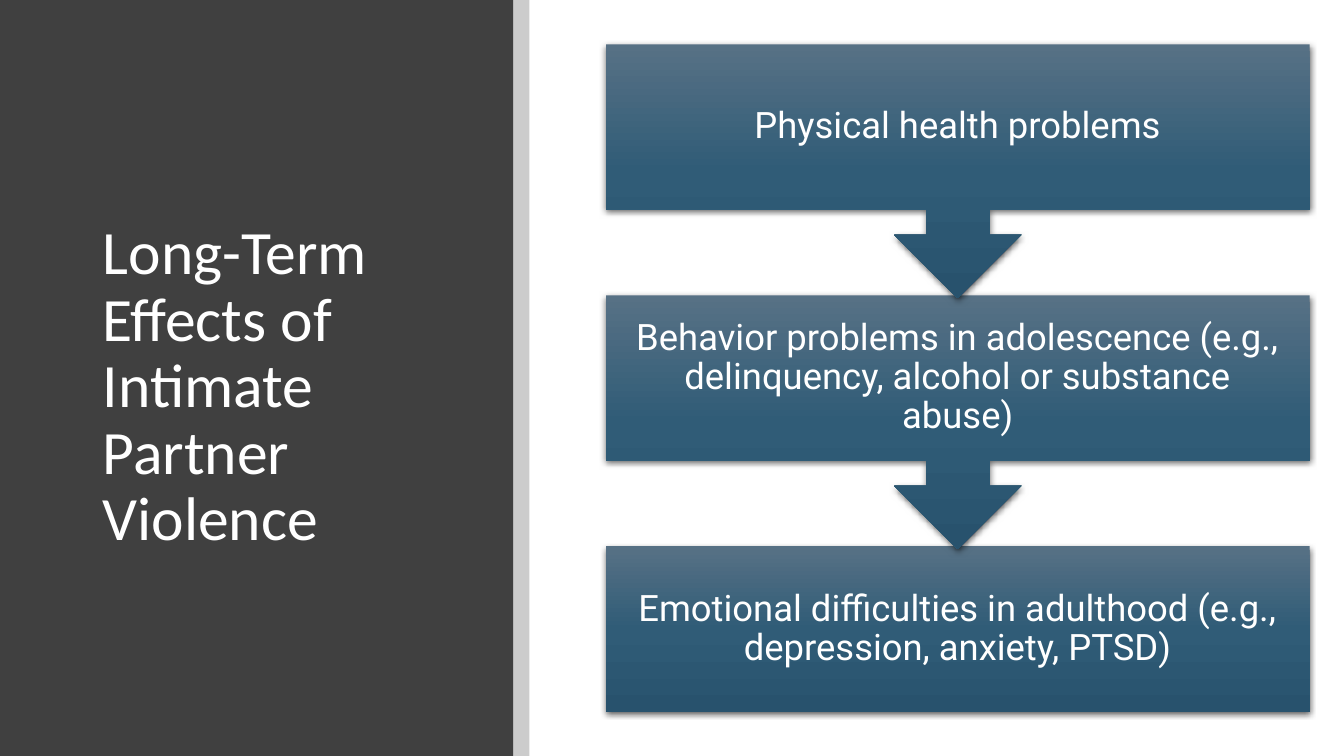
from lxml.etree import SubElement
from pptx import Presentation
from pptx.dml.color import RGBColor
from pptx.enum.shapes import MSO_SHAPE
from pptx.enum.text import MSO_ANCHOR, PP_ALIGN
from pptx.oxml import parse_xml
from pptx.oxml.ns import nsdecls, qn
from pptx.util import Inches, Pt

WHITE = RGBColor(0xFF, 0xFF, 0xFF)
BLACK = RGBColor(0x00, 0x00, 0x00)
CHARCOAL = RGBColor(0x40, 0x40, 0x40)
GRADIENT_STOPS = [
    (0, RGBColor(0x57, 0x71, 0x85)),
    (50, RGBColor(0x30, 0x5C, 0x77)),
    (100, RGBColor(0x28, 0x52, 0x6D)),
]

SLIDE_WIDTH, SLIDE_HEIGHT = 13.33, 7.5
PANEL_WIDTH, STRIPE_WIDTH = 5.09, 0.16
STEP_LEFT, STEP_TOP, STEP_WIDTH = 6.01, 0.44, 6.98
STEP_PITCH = 2.49
CALLOUT_HEIGHT, BOX_HEIGHT = 2.52, 1.64

EFFECTS = [
    "Physical health problems",
    "Behavior problems in adolescence (e.g., delinquency, alcohol or substance abuse)",
    "Emotional difficulties in adulthood (e.g., depression, anxiety, PTSD)",
]

presentation = Presentation()
presentation.slide_width = Inches(SLIDE_WIDTH)
presentation.slide_height = Inches(SLIDE_HEIGHT)
slide = presentation.slides.add_slide(presentation.slide_layouts[6])


def add_block(kind, left, top, width, height, color):
    shape = slide.shapes.add_shape(
        kind, Inches(left), Inches(top), Inches(width), Inches(height))
    shape.fill.solid()
    shape.fill.fore_color.rgb = color
    shape.line.fill.background()
    shape.shadow.inherit = False
    return shape


def set_text(shape, text, font_name, size, alignment):
    frame = shape.text_frame
    frame.text = text
    frame.word_wrap = True
    frame.vertical_anchor = MSO_ANCHOR.MIDDLE
    paragraph = frame.paragraphs[0]
    paragraph.alignment = alignment
    paragraph.line_spacing = 0.9
    font = paragraph.runs[0].font
    font.name, font.size, font.color.rgb = font_name, Pt(size), WHITE


# Dark panel with the title
add_block(MSO_SHAPE.RECTANGLE, 0, 0, PANEL_WIDTH, SLIDE_HEIGHT, CHARCOAL)
title = slide.shapes.add_textbox(Inches(0.92), Inches(0.89), Inches(3.65), Inches(5.91))
set_text(title, "Long-Term Effects of Intimate Partner Violence", "Calibri", 44, PP_ALIGN.LEFT)

# Translucent stripe beside the panel
stripe = add_block(MSO_SHAPE.RECTANGLE, PANEL_WIDTH, 0, STRIPE_WIDTH, SLIDE_HEIGHT, BLACK)
stripe_color = stripe.fill._xPr.find(qn("a:solidFill"))[0]
SubElement(stripe_color, qn("a:alpha"), val="20000")

# Chain of effects, last one first so that each arrow tip lies on the next box
last = len(EFFECTS) - 1
for row, effect in reversed(list(enumerate(EFFECTS))):
    kind, height = MSO_SHAPE.DOWN_ARROW_CALLOUT, CALLOUT_HEIGHT
    if row == last:
        kind, height = MSO_SHAPE.RECTANGLE, BOX_HEIGHT
    step = add_block(kind, STEP_LEFT, STEP_TOP + row * STEP_PITCH,
                     STEP_WIDTH, height, GRADIENT_STOPS[1][1])
    set_text(step, effect, "Roboto", 26, PP_ALIGN.CENTER)
    frame = step.text_frame
    frame.margin_left = frame.margin_right = Inches(0.2)
    frame.margin_top = frame.margin_bottom = Inches(0.2)

    # Three-stop vertical gradient
    properties = step._element.spPr
    stops = "".join(
        f'<a:gs pos="{position * 1000}"><a:srgbClr val="{color}"/></a:gs>'
        for position, color in GRADIENT_STOPS)
    properties.replace(properties.find(qn("a:solidFill")), parse_xml(
        f'<a:gradFill {nsdecls("a")} rotWithShape="1"><a:gsLst>{stops}</a:gsLst>'
        '<a:lin ang="5400000" scaled="0"/></a:gradFill>'))

    # Soft shadow below
    properties.find(qn("a:effectLst")).append(parse_xml(
        f'<a:outerShdw {nsdecls("a")} blurRad="{Pt(4.5)}" dist="{Pt(1.5)}" '
        'dir="5400000" algn="ctr" rotWithShape="0">'
        f'<a:srgbClr val="{BLACK}"><a:alpha val="63000"/></a:srgbClr></a:outerShdw>'))

presentation.save("out.pptx")
